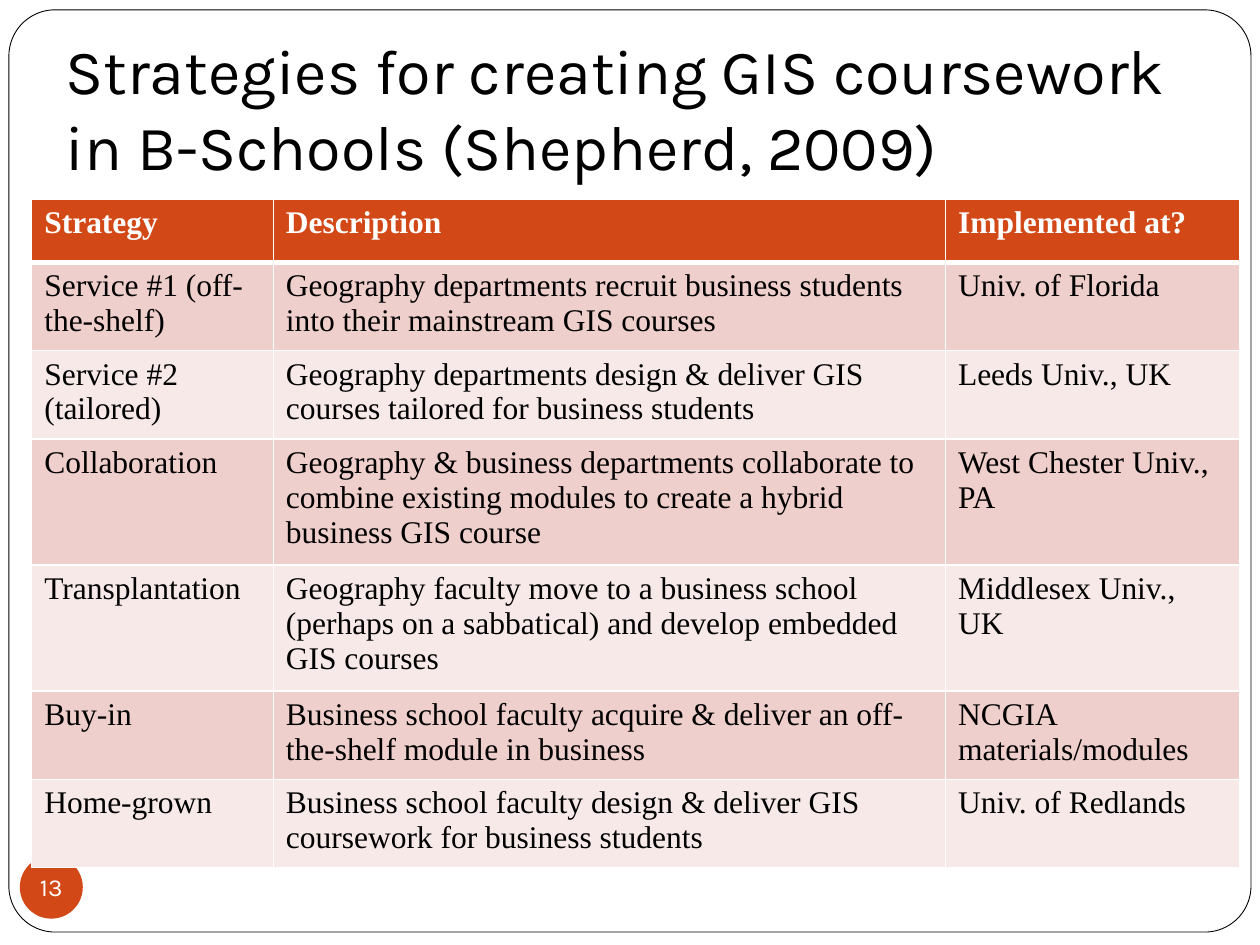
from lxml import etree
from pptx import Presentation
from pptx.dml.color import RGBColor
from pptx.enum.shapes import MSO_SHAPE
from pptx.enum.text import MSO_ANCHOR, PP_ALIGN
from pptx.oxml.ns import qn
from pptx.util import Cm, Pt

ROUNDED, OVAL = MSO_SHAPE.ROUNDED_RECTANGLE, MSO_SHAPE.OVAL
BOTTOM, MIDDLE, CENTER = MSO_ANCHOR.BOTTOM, MSO_ANCHOR.MIDDLE, PP_ALIGN.CENTER

COLORS = {
    "white": "FFFFFF",
    "black": "000000",
    "accent": "D34817",
    "band_dark": "EFCFCC",
    "band_light": "F7E9E8",
}
HEADING_FONT, BODY_FONT = "Karla", "Times New Roman"

COL_WIDTHS = (4.87, 13.55, 5.93)
ROW_HEIGHTS = (1.27, 1.69, 1.6, 2.2, 2.2, 1.69, 1.69)
STRATEGIES = (
    ("Strategy", "Description", "Implemented at?"),
    ("Service #1 (off-the-shelf)",
     "Geography departments recruit business students into their mainstream GIS courses",
     "Univ. of Florida"),
    ("Service #2 (tailored)",
     "Geography departments design & deliver GIS courses tailored for business students",
     "Leeds Univ., UK"),
    ("Collaboration",
     "Geography & business departments collaborate to combine existing modules "
     "to create a hybrid business GIS course",
     "West Chester Univ., PA"),
    ("Transplantation",
     "Geography faculty move to a business school (perhaps on a sabbatical) "
     "and develop embedded GIS courses",
     "Middlesex Univ., UK"),
    ("Buy-in",
     "Business school faculty acquire & deliver an off-the-shelf module in business",
     "NCGIA materials/modules"),
    ("Home-grown",
     "Business school faculty design & deliver GIS coursework for business students",
     "Univ. of Redlands"),
)


def rgb(name):
    """Return the palette colour with this name."""
    return RGBColor.from_string(COLORS[name])


def set_text(tf, text, font, size, color, bold=False):
    """Write one paragraph and return it."""
    p = tf.paragraphs[0]
    p.text = text
    p.font.name = font
    p.font.size = Pt(size)
    p.font.bold = bold
    p.font.color.rgb = rgb(color)
    return p


def add_shape(s, kind, left, top, width, height, fill):
    """Add a filled preset shape without outline or shadow."""
    sp = s.shapes.add_shape(kind, Cm(left), Cm(top), Cm(width), Cm(height))
    sp.shadow.inherit = False
    sp.fill.solid()
    sp.fill.fore_color.rgb = rgb(fill)
    sp.line.fill.background()
    return sp


def add_frame(s):
    """Add the thin rounded frame around the slide."""
    sp = add_shape(s, ROUNDED, 0.18, 0.2, 25.04, 18.59, "white")
    sp.adjustments[0] = 0.05
    sp.line.color.rgb = rgb("black")
    sp.line.width = Pt(0.5)


def add_title(s, text):
    """Add the bottom-anchored title."""
    tf = s.shapes.add_textbox(Cm(1.07), Cm(0.76), Cm(23.06), Cm(3.18)).text_frame
    tf.word_wrap = True
    tf.vertical_anchor = BOTTOM
    tf.margin_bottom = Cm(0.25)
    set_text(tf, text, HEADING_FONT, 36, "black")


def add_page_number(s, number):
    """Add the round page number badge."""
    tf = add_shape(s, OVAL, 0.4, 17.25, 1.27, 1.27, "accent").text_frame
    tf.margin_left = tf.margin_right = tf.margin_top = tf.margin_bottom = 0
    tf.word_wrap = False
    tf.vertical_anchor = MIDDLE
    set_text(tf, number, HEADING_FONT, 14, "white").alignment = CENTER


def set_borders(cell, widths):
    """Draw white borders with the given widths in points by side."""
    tc_pr = cell._tc.get_or_add_tcPr()
    for side, width in widths.items():
        ln = etree.SubElement(tc_pr, qn(f"a:ln{side}"), w=str(Pt(width)))
        fill = etree.SubElement(ln, qn("a:solidFill"))
        etree.SubElement(fill, qn("a:srgbClr"), val=COLORS["white"])


def add_strategy_table(s):
    """Add the banded table of strategies."""
    table = s.shapes.add_table(
        len(STRATEGIES), len(COL_WIDTHS), Cm(0.64), Cm(4.02),
        Cm(sum(COL_WIDTHS)), Cm(13.13)).table
    table.horz_banding = False
    for column, width in zip(table.columns, COL_WIDTHS):
        column.width = Cm(width)
    for i, (texts, height) in enumerate(zip(STRATEGIES, ROW_HEIGHTS)):
        row = table.rows[i]
        row.height = Cm(height)
        header = i == 0
        fill = "accent" if header else "band_dark" if i % 2 else "band_light"
        for cell, text in zip(row.cells, texts):
            set_borders(cell, {"L": 1, "R": 1, "T": 3 if i == 1 else 1,
                               "B": 3 if header else 1})
            cell.fill.solid()
            cell.fill.fore_color.rgb = rgb(fill)
            set_text(cell.text_frame, text, BODY_FONT, 18,
                     "white" if header else "black", header)


def main():
    """Build the slide and save it."""
    prs = Presentation()
    prs.slide_width, prs.slide_height = Cm(25.4), Cm(19.05)
    s = prs.slides.add_slide(prs.slide_layouts[6])
    add_frame(s)
    add_title(s, "Strategies for creating GIS coursework in B-Schools (Shepherd, 2009)")
    add_page_number(s, "13")
    add_strategy_table(s)
    prs.save("out.pptx")


if __name__ == "__main__":
    main()
